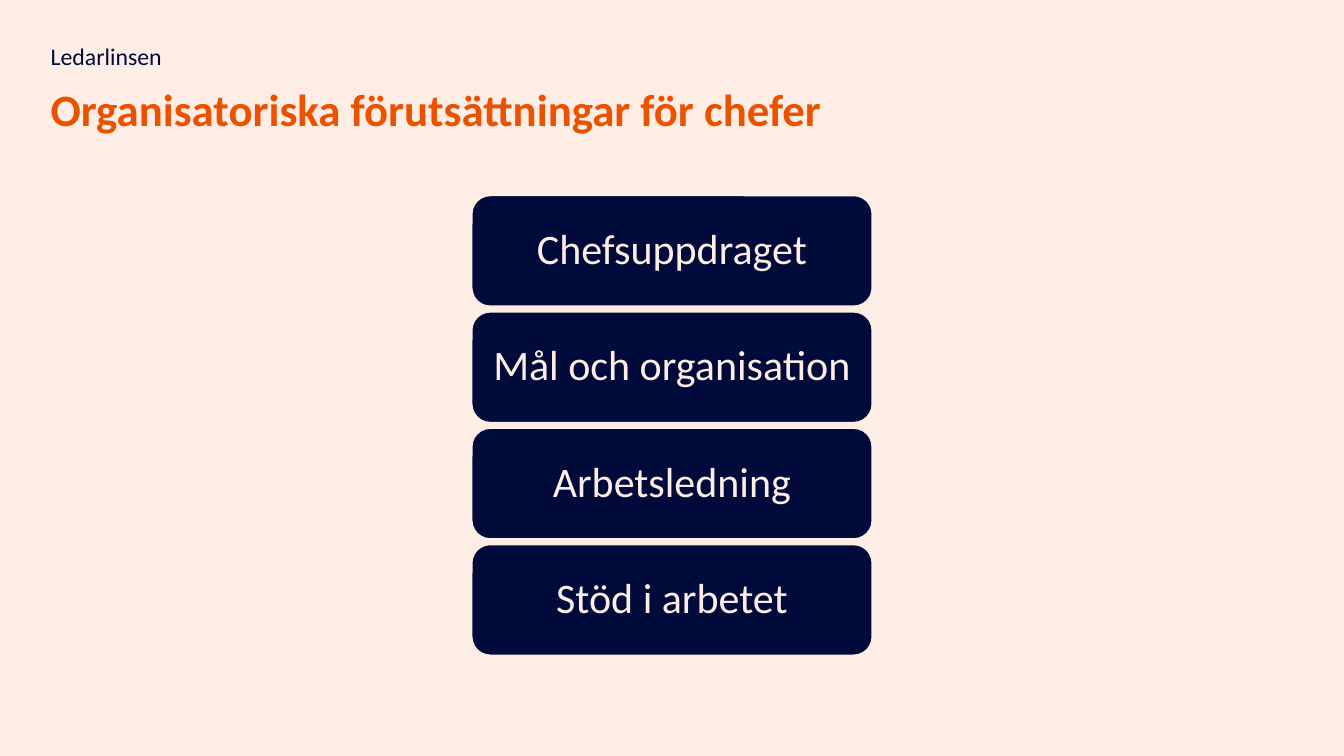
from pptx import Presentation
from pptx.dml.color import RGBColor
from pptx.enum.shapes import MSO_SHAPE as Shape
from pptx.enum.text import MSO_ANCHOR as Anchor, PP_ALIGN as Align
from pptx.util import Pt

NAVY, ORANGE, CREAM = "000B3C", "EB5200", "FDEDE5"


def color(value):
    return RGBColor.from_string(value)


def write(box, text, size, ink, spacing=1.0, bold=False):
    box.text_frame.word_wrap = True
    para = box.text_frame.paragraphs[0]
    para.line_spacing = spacing
    span = para.add_run()
    span.text = text
    span.font.name = "Calibri"
    span.font.size = Pt(size)
    span.font.bold = bold
    span.font.color.rgb = color(ink)
    return para


deck = Presentation()
deck.slide_width, deck.slide_height = Pt(960), Pt(540)
page = deck.slides.add_slide(deck.slide_layouts[6])
page.background.fill.solid()
page.background.fill.fore_color.rgb = color(CREAM)

title = page.shapes.add_textbox(Pt(29), Pt(55), Pt(904), Pt(57))
write(title, "Organisatoriska förutsättningar för chefer", 32, ORANGE, bold=True)

label = page.shapes.add_textbox(Pt(29), Pt(28.5), Pt(904), Pt(26))
write(label, "Ledarlinsen", 17, NAVY, 0.9)

areas = ["Chefsuppdraget", "Mål och organisation", "Arbetsledning", "Stöd i arbetet"]
width, height, first_top, pitch = 286, 79, 139.7, 83.1

for index, area in enumerate(areas):
    box = page.shapes.add_shape(
        Shape.ROUNDED_RECTANGLE,
        Pt((960 - width) / 2), Pt(first_top + index * pitch), Pt(width), Pt(height),
    )
    box.shadow.inherit = False
    box.fill.solid()
    box.fill.fore_color.rgb = color(NAVY)
    box.line.color.rgb = color(CREAM)
    box.line.width = Pt(1)
    frame = box.text_frame
    frame.margin_left = frame.margin_right = Pt(8)
    frame.margin_top = frame.margin_bottom = Pt(4)
    frame.vertical_anchor = Anchor.MIDDLE
    write(box, area, 30, CREAM, 0.9).alignment = Align.CENTER

deck.save("out.pptx")
